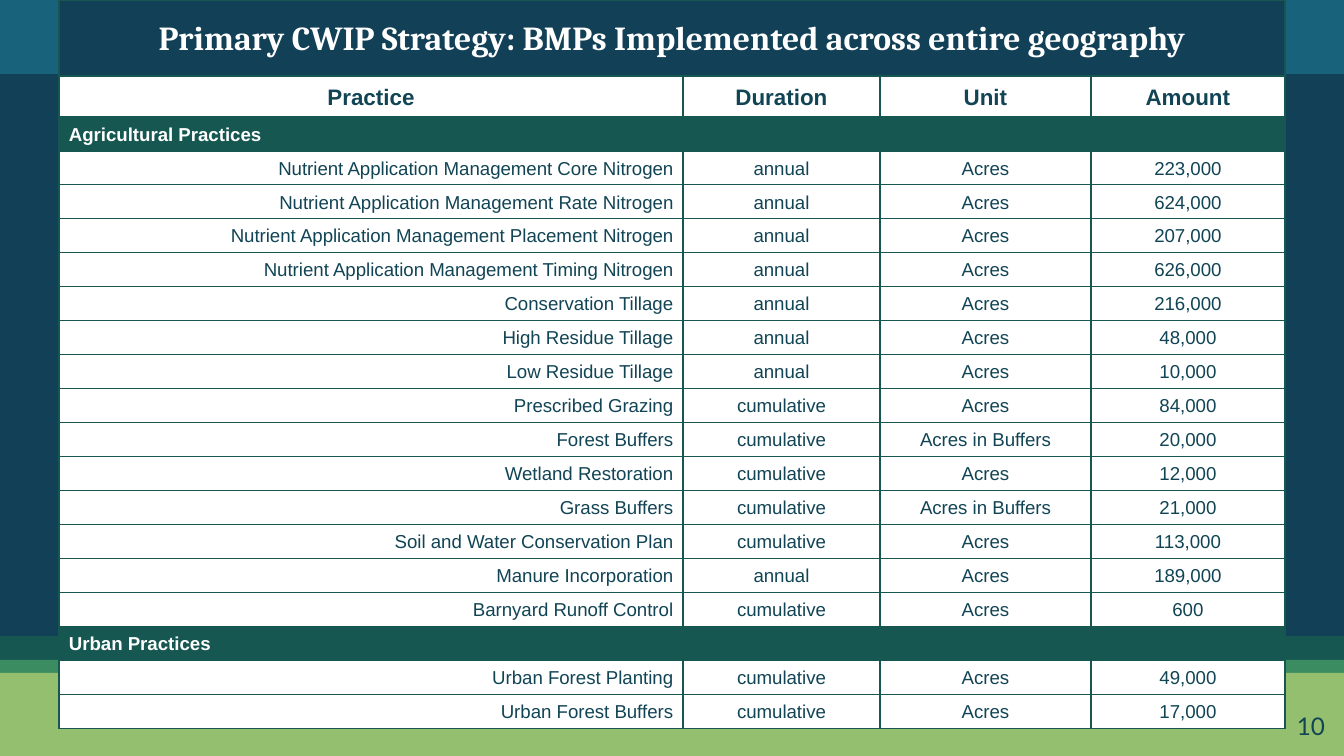
from lxml.etree import SubElement
from pptx import Presentation
from pptx.dml.color import RGBColor as RGB
from pptx.enum.shapes import MSO_SHAPE as SHAPE
from pptx.enum.text import MSO_ANCHOR as ANCHOR, PP_ALIGN as ALIGN
from pptx.oxml.ns import qn
from pptx.util import Emu, Pt

WHITE = RGB(0xFF, 0xFF, 0xFF)
NAVY = RGB(0x12, 0x40, 0x57)
BLUE = RGB(0x18, 0x63, 0x7B)
INK = RGB(0x11, 0x44, 0x54)
PINE = RGB(0x16, 0x57, 0x51)
GREEN = RGB(0x3B, 0x8D, 0x61)
LIME = RGB(0x94, 0xBF, 0x6E)

WIDTH, HEIGHT = 1344, 756
SCALE = 9144000 / WIDTH

BANDS = [
    (632, 35, PINE),
    (0, 78, BLUE),
    (74, 562, NAVY),
    (660, 17, GREEN),
    (673, 83, LIME),
]

TITLE = "Primary CWIP Strategy: BMPs Implemented across entire geography"
HEADINGS = ("Practice", "Duration", "Unit", "Amount")
SECTIONS = {
    "Agricultural Practices": [
        ("Nutrient Application Management Core Nitrogen", "annual", "Acres", "223,000"),
        ("Nutrient Application Management Rate Nitrogen", "annual", "Acres", "624,000"),
        ("Nutrient Application Management Placement Nitrogen", "annual", "Acres", "207,000"),
        ("Nutrient Application Management Timing Nitrogen", "annual", "Acres", "626,000"),
        ("Conservation Tillage", "annual", "Acres", "216,000"),
        ("High Residue Tillage", "annual", "Acres", "48,000"),
        ("Low Residue Tillage", "annual", "Acres", "10,000"),
        ("Prescribed Grazing", "cumulative", "Acres", "84,000"),
        ("Forest Buffers", "cumulative", "Acres in Buffers", "20,000"),
        ("Wetland Restoration", "cumulative", "Acres", "12,000"),
        ("Grass Buffers", "cumulative", "Acres in Buffers", "21,000"),
        ("Soil and Water Conservation Plan", "cumulative", "Acres", "113,000"),
        ("Manure Incorporation", "annual", "Acres", "189,000"),
        ("Barnyard Runoff Control", "cumulative", "Acres", "600"),
    ],
    "Urban Practices": [
        ("Urban Forest Planting", "cumulative", "Acres", "49,000"),
        ("Urban Forest Buffers", "cumulative", "Acres", "17,000"),
    ],
}
COLUMNS = (624, 197, 211, 194)
TITLE_ROW, HEADING_ROW, BODY_ROW = 76, 41, 34


def px(n):
    return Emu(round(n * SCALE))


class Deck:
    body, serif, number = "Arial", "Cambria", "Lato"
    border, border_width = PINE, Pt(0.75)
    line_spacing = 1.07

    def __init__(self, prs):
        self.s = prs.slides.add_slide(prs.slide_layouts[6])

    def band(self, y, h, color):
        sp = self.s.shapes.add_shape(SHAPE.RECTANGLE, 0, px(y), px(WIDTH), px(h))
        sp.shadow.inherit = False
        sp.fill.solid()
        sp.fill.fore_color.rgb = color
        sp.line.fill.background()

    def set_text(self, tf, text, size, color, align, font, bold=False):
        p = tf.paragraphs[0]
        p.text = text
        p.alignment = align
        p.font.name, p.font.size, p.font.bold = font, Pt(size), bold
        p.font.color.rgb = color
        return p

    def label(self, x, y, w, h, text, size, color, align):
        tf = self.s.shapes.add_textbox(px(x), px(y), px(w), px(h)).text_frame
        tf.word_wrap = True
        tf.margin_left = tf.margin_right = tf.margin_top = tf.margin_bottom = px(13)
        self.set_text(tf, text, size, color, align, self.number)

    def table(self, x, y, columns, heights):
        frame = self.s.shapes.add_table(
            len(heights), len(columns), px(x), px(y), px(sum(columns)), px(sum(heights)))
        table = frame.table
        table.first_row = table.horz_banding = False
        for column, w in zip(table.columns, columns):
            column.width = px(w)
        for row, h in zip(table.rows, heights):
            row.height = px(h)
        return table

    def cell(self, cell, text, fill, size, color, align, font=None, bold=False):
        cell.margin_left = cell.margin_right = px(10)
        cell.margin_top = cell.margin_bottom = 0
        cell.vertical_anchor = ANCHOR.MIDDLE
        p = self.set_text(cell.text_frame, text, size, color, align, font or self.body, bold)
        p.line_spacing = self.line_spacing
        tc_pr = cell._tc.get_or_add_tcPr()
        for side in ("a:lnL", "a:lnR", "a:lnT", "a:lnB"):
            ln = SubElement(tc_pr, qn(side), w=str(int(self.border_width)))
            solid = SubElement(ln, qn("a:solidFill"))
            SubElement(solid, qn("a:srgbClr"), val=str(self.border))
        cell.fill.solid()
        cell.fill.fore_color.rgb = fill

    def spanning_row(self, table, row, text, *style, **options):
        last = len(table.columns) - 1
        table.cell(row, 0).merge(table.cell(row, last))
        for col in range(last + 1):
            self.cell(table.cell(row, col), "" if col else text, *style, **options)

    def row(self, table, row, texts, size, first_align, bold=False):
        for col, text in enumerate(texts):
            align = ALIGN.CENTER if col else first_align
            self.cell(table.cell(row, col), text, WHITE, size, INK, align, bold=bold)


def main():
    prs = Presentation()
    prs.slide_width, prs.slide_height = px(WIDTH), px(HEIGHT)
    deck = Deck(prs)

    for band in BANDS:
        deck.band(*band)

    body_count = sum(1 + len(practices) for practices in SECTIONS.values())
    heights = [TITLE_ROW, HEADING_ROW] + [BODY_ROW] * body_count
    table = deck.table(59, 0, COLUMNS, heights)
    deck.spanning_row(table, 0, TITLE, NAVY, 18, WHITE, ALIGN.CENTER,
                      font=deck.serif, bold=True)
    deck.row(table, 1, HEADINGS, 12, ALIGN.CENTER, bold=True)
    row = 2
    for section, practices in SECTIONS.items():
        deck.spanning_row(table, row, section, PINE, 10, WHITE, ALIGN.LEFT, bold=True)
        for row, practice in enumerate(practices, row + 1):
            deck.row(table, row, practice, 10, ALIGN.RIGHT)
        row += 1

    deck.label(1258, 698, 80, 58, "10", 13, INK, ALIGN.RIGHT)
    prs.save("out.pptx")


if __name__ == "__main__":
    main()
